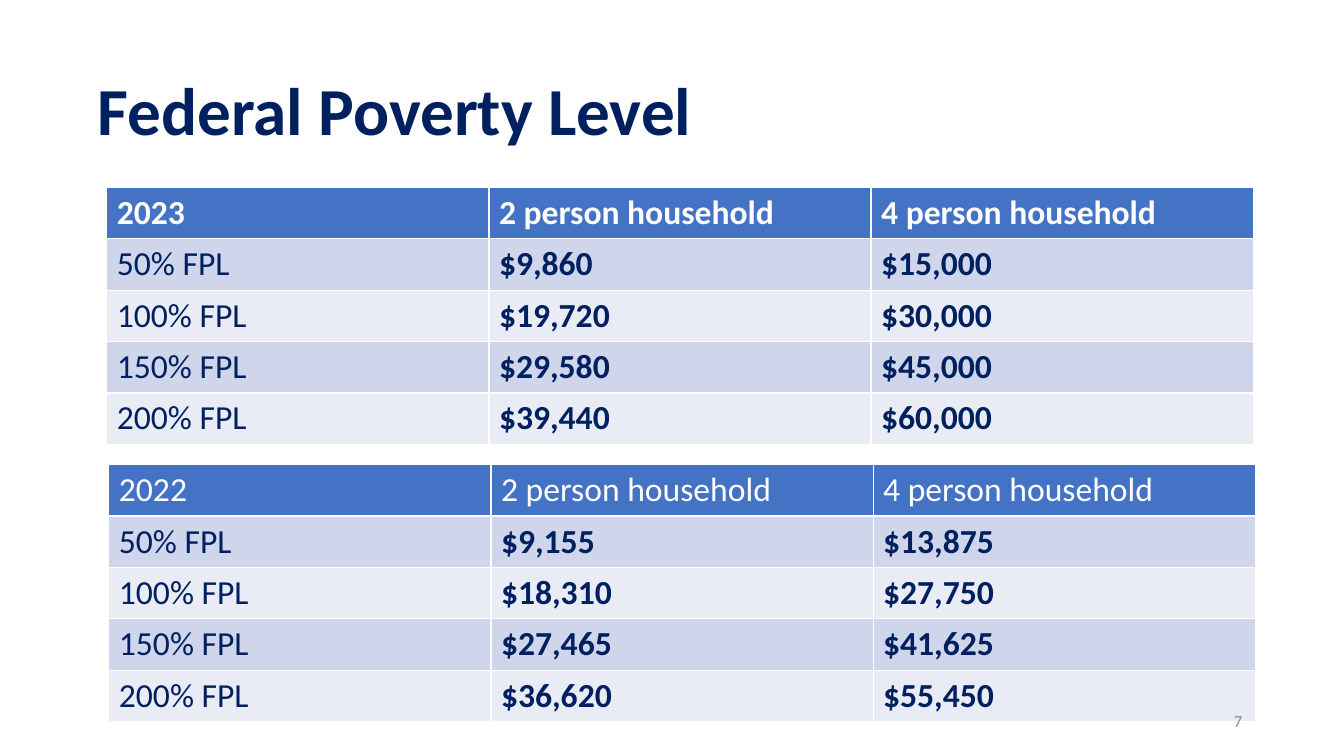
from pptx import Presentation
from pptx.dml.color import RGBColor
from pptx.enum.text import MSO_ANCHOR, PP_ALIGN
from pptx.util import Inches, Pt

MIDDLE = MSO_ANCHOR.MIDDLE
LEFT, RIGHT = PP_ALIGN.LEFT, PP_ALIGN.RIGHT

# Content
TITLE = "Federal Poverty Level"
PAGE_NUMBER = "7"
HOUSEHOLDS = ["2 person household", "4 person household"]
LEVELS = ["50% FPL", "100% FPL", "150% FPL", "200% FPL"]
TABLES = [
    {"year": "2023", "left": 1.06, "top": 1.86, "bold_header": True,
     "incomes": [("$9,860", "$15,000"), ("$19,720", "$30,000"),
                 ("$29,580", "$45,000"), ("$39,440", "$60,000")]},
    {"year": "2022", "left": 1.08, "top": 4.61, "bold_header": False,
     "incomes": [("$9,155", "$13,875"), ("$18,310", "$27,750"),
                 ("$27,465", "$41,625"), ("$36,620", "$55,450")]},
]

# Look
FONT = "Calibri"
NAVY, WHITE, GREY = "002060", "FFFFFF", "8C8C8C"
HEADER_FILL = "4472C4"
BAND_FILLS = ["CFD5EA", "E9EBF5"]
COLUMN_WIDTH, ROW_HEIGHT = 3.79, 0.51


def color(value):
    return RGBColor.from_string(value)


def write(frame, text, size, text_color, bold=False, align=LEFT):
    frame.text = text
    para = frame.paragraphs[0]
    para.alignment = align
    font = para.runs[0].font
    font.name, font.size, font.bold = FONT, Pt(size), bold
    font.color.rgb = color(text_color)


def place(box, left, top, width, height):
    box.left, box.top = Inches(left), Inches(top)
    box.width, box.height = Inches(width), Inches(height)


def add_income_table(page, year, left, top, bold_header, incomes):
    rows = [[year, *HOUSEHOLDS]]
    rows += [[level, *pair] for level, pair in zip(LEVELS, incomes)]
    columns = len(rows[0])
    # The default table style supplies the white cell borders
    table = page.shapes.add_table(
        len(rows), columns, Inches(left), Inches(top),
        Inches(columns * COLUMN_WIDTH), Inches(len(rows) * ROW_HEIGHT)).table
    for r, row in enumerate(rows):
        for c, text in enumerate(row):
            cell = table.cell(r, c)
            header = r == 0
            cell.fill.solid()
            cell.fill.fore_color.rgb = color(
                HEADER_FILL if header else BAND_FILLS[(r - 1) % 2])
            write(cell.text_frame, text, 24, WHITE if header else NAVY,
                  bold_header if header else c > 0)


deck = Presentation()
deck.slide_width, deck.slide_height = Inches(13.33), Inches(7.5)
page = deck.slides.add_slide(deck.slide_layouts[5])

# Title
title = page.shapes.title
place(title, 0.92, 0.4, 11.5, 1.45)
frame = title.text_frame
frame.vertical_anchor = MIDDLE
frame.margin_left = frame.margin_right = Inches(0.05)
frame.margin_top = frame.margin_bottom = Inches(0.05)
write(frame, TITLE, 48, NAVY, bold=True)
frame.paragraphs[0].line_spacing = 0.9

# Income tables
for table_content in TABLES:
    add_income_table(page, **table_content)

# Page number
number = page.shapes.add_textbox(0, 0, 0, 0)
place(number, 9.42, 6.95, 3, 0.4)
number.text_frame.word_wrap = True
number.text_frame.vertical_anchor = MIDDLE
write(number.text_frame, PAGE_NUMBER, 12, GREY, align=RIGHT)

deck.save("out.pptx")
